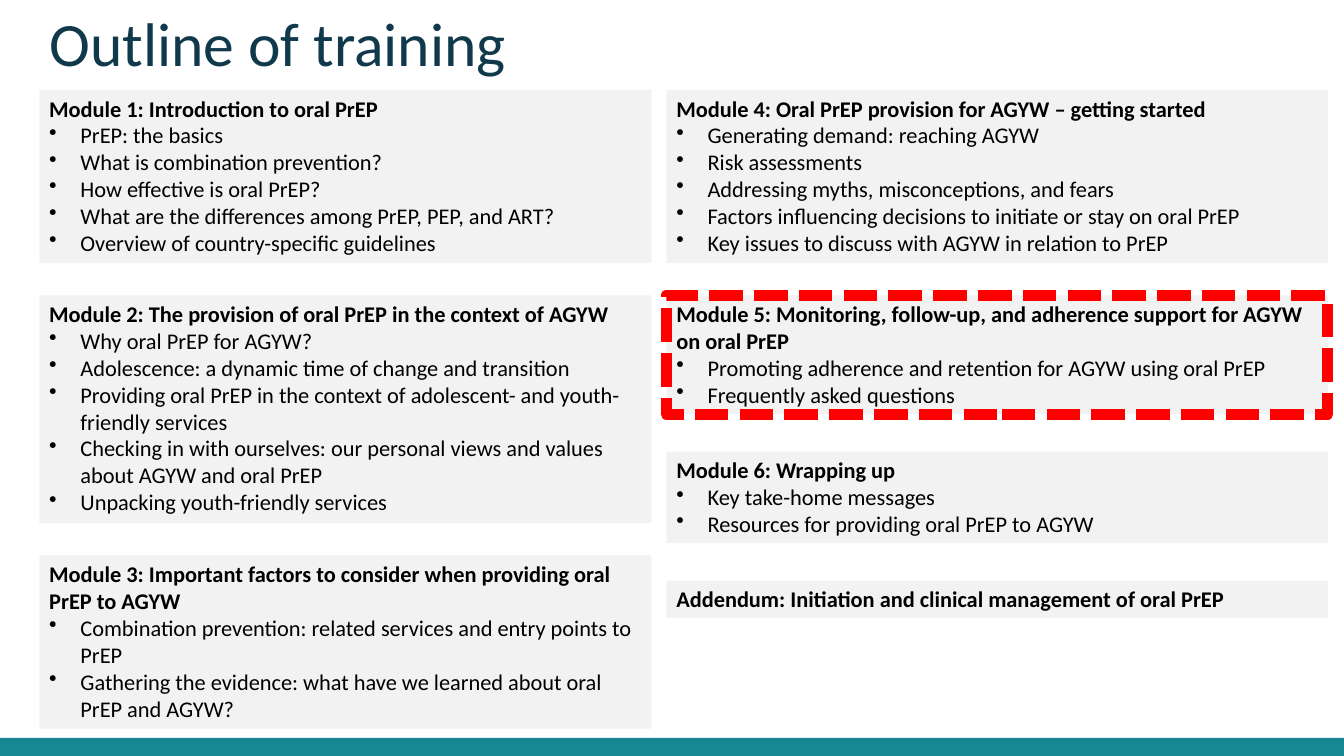
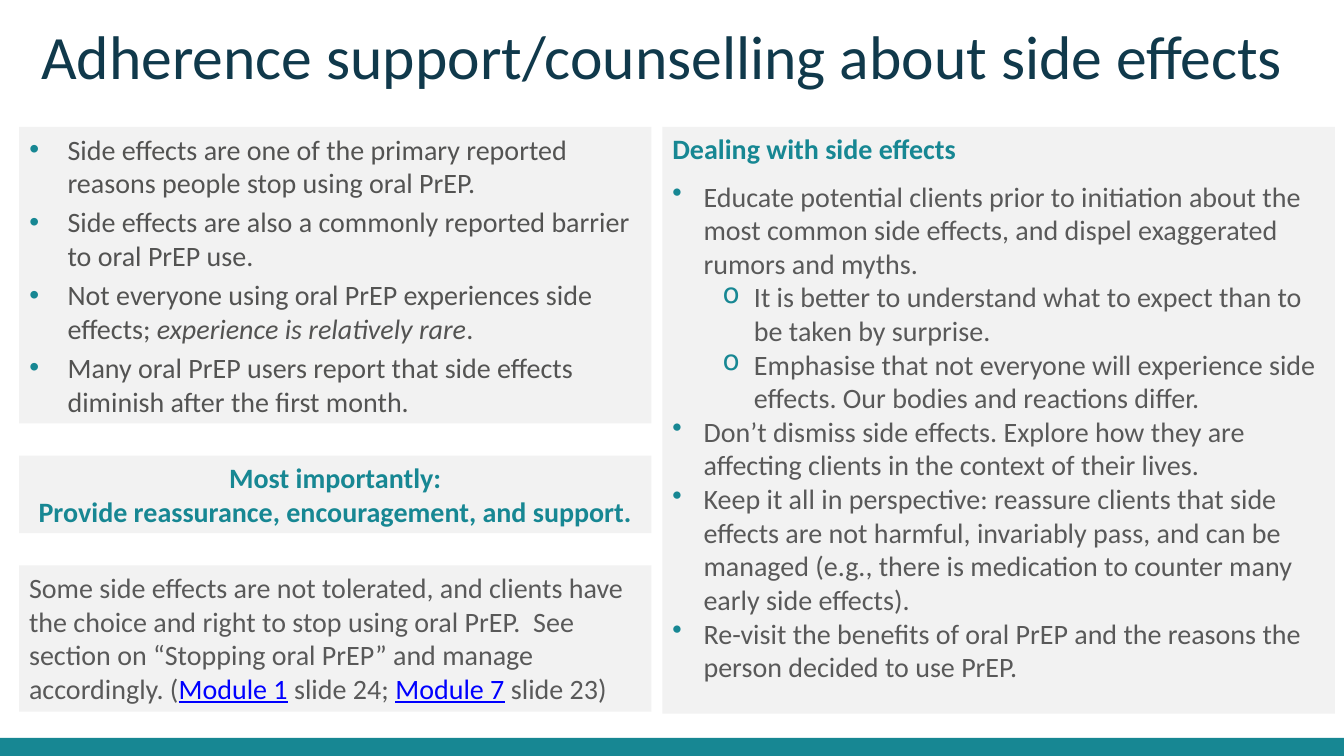
from lxml.etree import SubElement
from pptx import Presentation
from pptx.dml.color import RGBColor
from pptx.enum.dml import MSO_LINE
from pptx.enum.shapes import MSO_SHAPE
from pptx.enum.text import MSO_ANCHOR, MSO_AUTO_SIZE, PP_ALIGN
from pptx.oxml.ns import qn
from pptx.util import Inches, Pt

TEAL = "178793"
NAVY = "10394B"
PANEL_GRAY = "F2F2F2"
TEXT_GRAY = "595959"
BODY_GRAY = "535352"
BLACK = "000000"
RED = "FF0000"
LINK_BLUE = "0000FF"
FONT = "Calibri"

color = RGBColor.from_string


def add_rectangle(shapes, left, top, width, height, fill):
    shape = shapes.add_shape(
        MSO_SHAPE.RECTANGLE, Inches(left), Inches(top), Inches(width), Inches(height)
    )
    shape.shadow.inherit = False
    shape.fill.solid()
    shape.fill.fore_color.rgb = color(fill)
    shape.line.fill.background()
    return shape


def write_paragraphs(shape, lines, size, bullet_color=None, indent=0.31):
    frame = shape.text_frame
    frame.word_wrap = True
    frame.auto_size = MSO_AUTO_SIZE.NONE
    frame.vertical_anchor = MSO_ANCHOR.TOP
    for index, (text, text_color, bold, bullet) in enumerate(lines):
        paragraph = frame.add_paragraph() if index else frame.paragraphs[0]
        paragraph.alignment = PP_ALIGN.LEFT
        for piece in text.split("*"):
            paragraph.add_run().text = piece
        if bullet:
            paragraph.level = 1 if bullet == "o" else 0
            properties = paragraph._p.get_or_add_pPr()
            properties.set("marL", str(Inches(indent + 0.5 * paragraph.level)))
            properties.set("indent", str(Inches(-indent)))
            bullet_fill = SubElement(properties, qn("a:buClr"))
            SubElement(bullet_fill, qn("a:srgbClr"), val=bullet_color)
            SubElement(properties, qn("a:buChar"), char=bullet)
        paragraph.font.name = FONT
        paragraph.font.size = Pt(size)
        paragraph.font.bold = bold
        paragraph.font.color.rgb = color(text_color)
    return frame.paragraphs


presentation = Presentation()
presentation.slide_width = Inches(13.33)
presentation.slide_height = Inches(7.5)

titles = [
    (5, "Outline of training", 0.39, 0.11, 12, 1.06),
    (1, "Adherence support/counselling about side effects", 0.31, 0.24, 12.77, 0.73),
]
for layout, text, left, top, width, height in titles:
    slide = presentation.slides.add_slide(presentation.slide_layouts[layout])
    title = slide.shapes.title
    title.left, title.top = Inches(left), Inches(top)
    title.width, title.height = Inches(width), Inches(height)
    write_paragraphs(title, [(text, NAVY, False, None)], 44)[0].line_spacing = Pt(44.8)

outline, side_effects = presentation.slides

band = add_rectangle(outline.shapes, 0, 7.32, 13.4, 0.21, TEAL)
presentation.slide_master.shapes.element.append(band.element)

left_column = (0.39, 6.07)
right_column = (6.61, 6.56)
modules = [
    (left_column, 0.89, 1.72, "Module 1: Introduction to oral PrEP", [
        "PrEP: the basics",
        "What is combination prevention?",
        "How effective is oral PrEP?",
        "What are the differences among PrEP, PEP, and ART?",
        "Overview of country-specific guidelines",
    ]),
    (left_column, 2.93, 2.26, "Module 2: The provision of oral PrEP in the context of AGYW", [
        "Why oral PrEP for AGYW?",
        "Adolescence: a dynamic time of change and transition",
        "Providing oral PrEP in the context of adolescent- and youth- friendly services",
        "Checking in with ourselves: our personal views and values about AGYW and oral PrEP",
        "Unpacking youth-friendly services",
    ]),
    (left_column, 5.51, 1.72,
     "Module 3: Important factors to consider when providing oral PrEP to AGYW", [
        "Combination prevention: related services and entry points to PrEP",
        "Gathering the evidence: what have we learned about oral PrEP and AGYW?",
     ]),
    (right_column, 0.89, 1.72, "Module 4: Oral PrEP provision for AGYW – getting started", [
        "Generating demand: reaching AGYW",
        "Risk assessments",
        "Addressing myths, misconceptions, and fears",
        "Factors influencing decisions to initiate or stay on oral PrEP",
        "Key issues to discuss with AGYW in relation to PrEP",
    ]),
    (right_column, 2.93, 1.18,
     "Module 5: Monitoring, follow-up, and adherence support for AGYW on oral PrEP", [
        "Promoting adherence and retention for AGYW using oral PrEP",
        "Frequently asked questions",
     ]),
    (right_column, 4.48, 0.91, "Module 6: Wrapping up", [
        "Key take-home messages",
        "Resources for providing oral PrEP to AGYW",
    ]),
    (right_column, 5.76, 0.37, "Addendum: Initiation and clinical management of oral PrEP", []),
]
for (left, width), top, height, heading, topics in modules:
    panel = add_rectangle(outline.shapes, left, top, width, height, PANEL_GRAY)
    lines = [(heading, BLACK, True, None)]
    lines += [(topic, BLACK, False, "•") for topic in topics]
    write_paragraphs(panel, lines, 16, BLACK)
    if heading.startswith("Module 5"):
        panel.line.color.rgb = color(RED)
        panel.line.width = Pt(8)
        panel.line.dash_style = MSO_LINE.SQUARE_DOT

body = side_effects.placeholders[1]
body.left, body.top = Inches(0.19), Inches(1.26)
body.width, body.height = Inches(6.27), Inches(2.94)
body.fill.solid()
body.fill.fore_color.rgb = color(PANEL_GRAY)
facts = [
    "Side effects are one of the primary reported reasons people stop using oral PrEP.",
    "Side effects are also a commonly reported barrier to oral PrEP use.",
    "Not everyone using oral PrEP experiences side effects; *experience is relatively rare*.",
    "Many oral PrEP users report that side effects diminish after the first month.",
]
fact_lines = [(fact, BODY_GRAY, False, "•") for fact in facts]
for paragraph in write_paragraphs(body, fact_lines, 20, TEAL, 0.38):
    paragraph.space_before = Pt(4)
    for run in paragraph.runs[1::2]:
        run.font.italic = True

advice = [
    ("•", "Educate potential clients prior to initiation about the most common side effects, "
          "and dispel exaggerated rumors and myths."),
    ("o", "It is better to understand what to expect than to be taken by surprise."),
    ("o", "Emphasise that not everyone will experience side effects. "
          "Our bodies and reactions differ."),
    ("•", "Don’t dismiss side effects. Explore how they are affecting clients "
          "in the context of their lives."),
    ("•", "Keep it all in perspective: reassure clients that side effects are not harmful, "
          "invariably pass, and can be managed (e.g., there is medication to counter many "
          "early side effects)."),
    ("•", "Re-visit the benefits of oral PrEP and the reasons the person decided to use PrEP."),
]
advice_panel = add_rectangle(side_effects.shapes, 6.57, 1.26, 6.67, 5.82, PANEL_GRAY)
advice_lines = [("Dealing with side effects", TEAL, True, None)]
advice_lines += [(text, TEXT_GRAY, False, bullet) for bullet, text in advice]
write_paragraphs(advice_panel, advice_lines, 20, TEAL)[0].space_after = Pt(9.6)

message_panel = add_rectangle(side_effects.shapes, 0.19, 4.52, 6.27, 0.77, PANEL_GRAY)
message_lines = [
    ("Most importantly:", TEAL, True, None),
    ("Provide reassurance, encouragement, and support.", TEAL, True, None),
]
for paragraph in write_paragraphs(message_panel, message_lines, 20):
    paragraph.alignment = PP_ALIGN.CENTER

stopping_panel = add_rectangle(side_effects.shapes, 0.19, 5.61, 6.27, 1.45, PANEL_GRAY)
stopping_text = (
    "Some side effects are not tolerated, and clients have the choice and right to stop "
    "using oral PrEP.  See section on “Stopping oral PrEP” and manage accordingly. "
    "(*Module 1* slide 24; *Module 7* slide 23)"
)
stopping_lines = [(stopping_text, TEXT_GRAY, False, None)]
for run in write_paragraphs(stopping_panel, stopping_lines, 20)[0].runs[1::2]:
    run.font.underline = True
    run.font.color.rgb = color(LINK_BLUE)

presentation.save("out.pptx")
